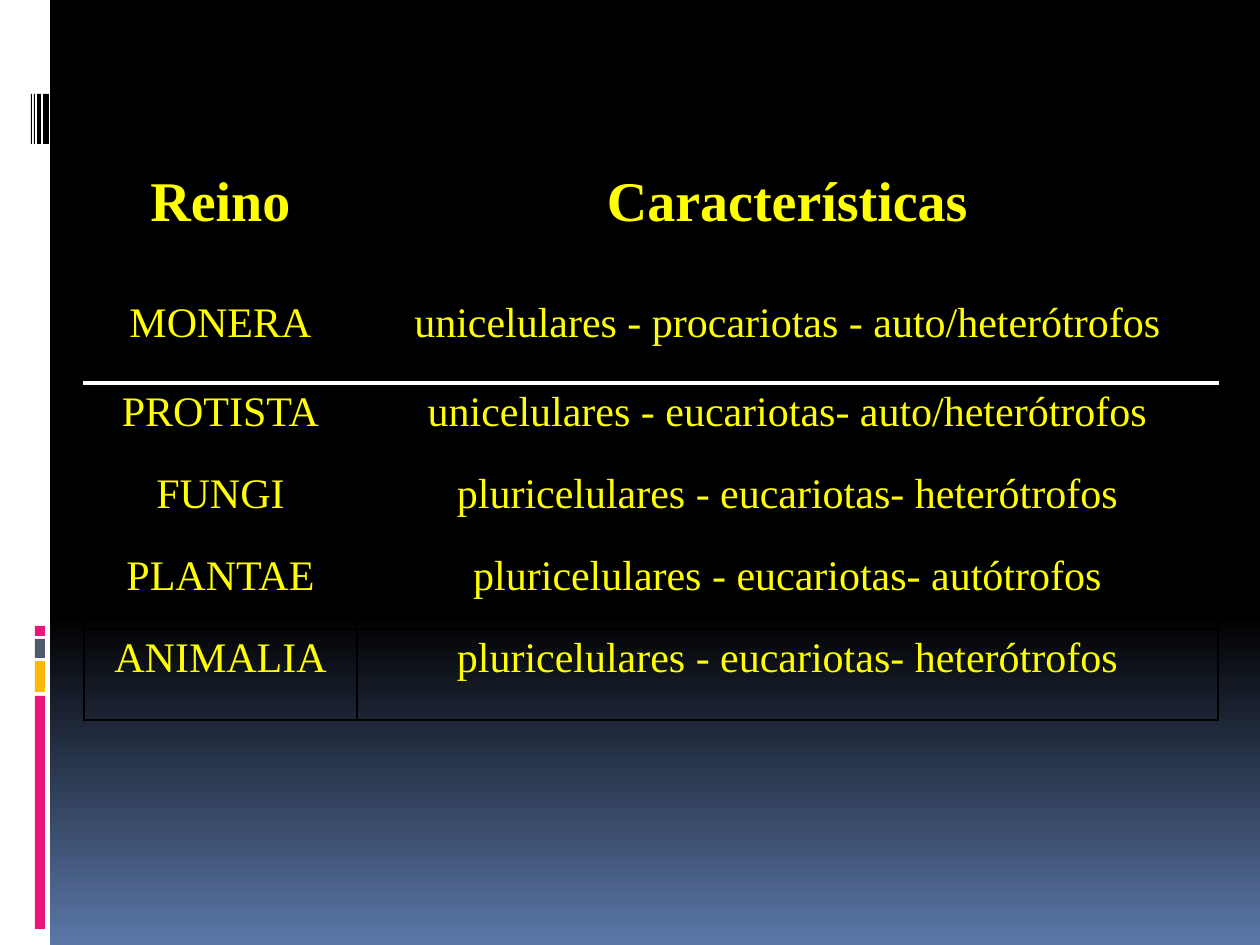
"""Build a slide with a table of the five kingdoms of living beings."""
import copy
from dataclasses import dataclass

import pptx
import pptx.dml.color
import pptx.enum.shapes
import pptx.enum.text
import pptx.oxml.ns
import pptx.oxml.xmlchemy
import pptx.util
from lxml import etree

EMU_PER_PX = 914400 / 126
FONT = "Times New Roman"
COLORS = {
    "white": "FFFFFF",
    "black": "000000",
    "pink": "EA157A",
    "amber": "FEB80A",
    "slate": "4E5B6F",
    "blue": "5B77A8",
    "yellow": "FFFF00",
}
GRADIENT = [(0, "black"), (0.65, "black"), (1, "blue")]
COLUMN_WIDTHS = [273, 861]
INDENT = 48


@dataclass
class Bar:
    left: int
    top: int
    width: int
    height: int
    color: str


@dataclass
class Kingdom:
    name: str
    traits: str
    height: int
    size: int = 24
    bold: bool = False


BARS = [
    Bar(0, 0, 50, 945, "white"),
    Bar(35, 696, 10, 233, "pink"),
    Bar(35, 661, 10, 31, "amber"),
    Bar(35, 639, 10, 19, "slate"),
    Bar(35, 626, 10, 10, "pink"),
    *[Bar(left, 94, width, 50, "black") for left, width in [(43, 6), (37, 4), (34, 1), (31, 1)]],
]
ROWS = [
    Kingdom("Reino", "Características", 129, 32, True),
    Kingdom("MONERA", "unicelulares - procariotas - auto/heterótrofos", 89),
    Kingdom("PROTISTA", "unicelulares - eucariotas- auto/heterótrofos", 82),
    Kingdom("FUNGI", "pluricelulares - eucariotas- heterótrofos", 82),
    Kingdom("PLANTAE", "pluricelulares - eucariotas- autótrofos", 82),
    Kingdom("ANIMALIA", "pluricelulares - eucariotas- heterótrofos", 91),
]
RULE_BELOW = 1


def px(length: int) -> int:
    return pptx.util.Emu(round(length * EMU_PER_PX))


def rgb(name: str) -> pptx.dml.color.RGBColor:
    return pptx.dml.color.RGBColor.from_string(COLORS[name])


def paint_background(slide) -> None:
    fill = slide.background.fill
    fill.gradient()
    fill.gradient_angle = 270
    stop_list = slide.element.find(".//" + pptx.oxml.ns.qn("a:gsLst"))
    stop_list.append(copy.deepcopy(stop_list[0]))
    for stop, (position, color) in zip(fill.gradient_stops, GRADIENT):
        stop.position = position
        stop.color.rgb = rgb(color)


def draw_bar(slide, bar: Bar) -> None:
    shape = slide.shapes.add_shape(
        pptx.enum.shapes.MSO_SHAPE.RECTANGLE,
        px(bar.left), px(bar.top), px(bar.width), px(bar.height),
    )
    shape.shadow.inherit = False
    shape.fill.solid()
    shape.fill.fore_color.rgb = rgb(bar.color)
    shape.line.fill.background()


def add_border(cell, side: str, color: str, points: int) -> None:
    qn = pptx.oxml.ns.qn
    properties = cell._tc.get_or_add_tcPr()
    line = etree.SubElement(properties, qn(f"a:ln{side}"), w=str(pptx.util.Pt(points)))
    solid = etree.SubElement(line, qn("a:solidFill"))
    etree.SubElement(solid, qn("a:srgbClr"), val=COLORS[color])


def fill_cell(cell, text: str, kingdom: Kingdom, row: int) -> None:
    ruled_sides = {RULE_BELOW: "B", RULE_BELOW + 1: "T"}
    for side in "LRTB":
        ruled = ruled_sides.get(row) == side
        add_border(cell, side, "white" if ruled else "black", 3 if ruled else 1)
    cell.fill.background()
    cell.text_frame.text = text
    paragraph = cell.text_frame.paragraphs[0]
    paragraph.alignment = pptx.enum.text.PP_ALIGN.CENTER
    properties = paragraph._p.get_or_add_pPr()
    properties.set("marL", str(px(INDENT)))
    properties.set("indent", str(-px(INDENT)))
    font = paragraph.runs[0].font
    font.name = FONT
    font.size = pptx.util.Pt(kingdom.size)
    font.bold = kingdom.bold
    font.color.rgb = rgb("yellow")


def draw_table(slide, kingdoms: list[Kingdom]) -> None:
    height = sum(kingdom.height for kingdom in kingdoms)
    table = slide.shapes.add_table(
        len(kingdoms), len(COLUMN_WIDTHS),
        px(84), px(165), px(sum(COLUMN_WIDTHS)), px(height),
    ).table
    table.first_row = False
    table.horz_banding = False
    for column, width in zip(table.columns, COLUMN_WIDTHS):
        column.width = px(width)
    for row, kingdom in enumerate(kingdoms):
        table.rows[row].height = px(kingdom.height)
        for column, text in enumerate((kingdom.name, kingdom.traits)):
            fill_cell(table.cell(row, column), text, kingdom, row)


def main() -> None:
    presentation = pptx.Presentation()
    presentation.slide_width = px(1260)
    presentation.slide_height = px(945)
    slide = presentation.slides.add_slide(presentation.slide_layouts[6])
    paint_background(slide)
    for bar in BARS:
        draw_bar(slide, bar)
    draw_table(slide, ROWS)
    presentation.save("out.pptx")


if __name__ == "__main__":
    main()
